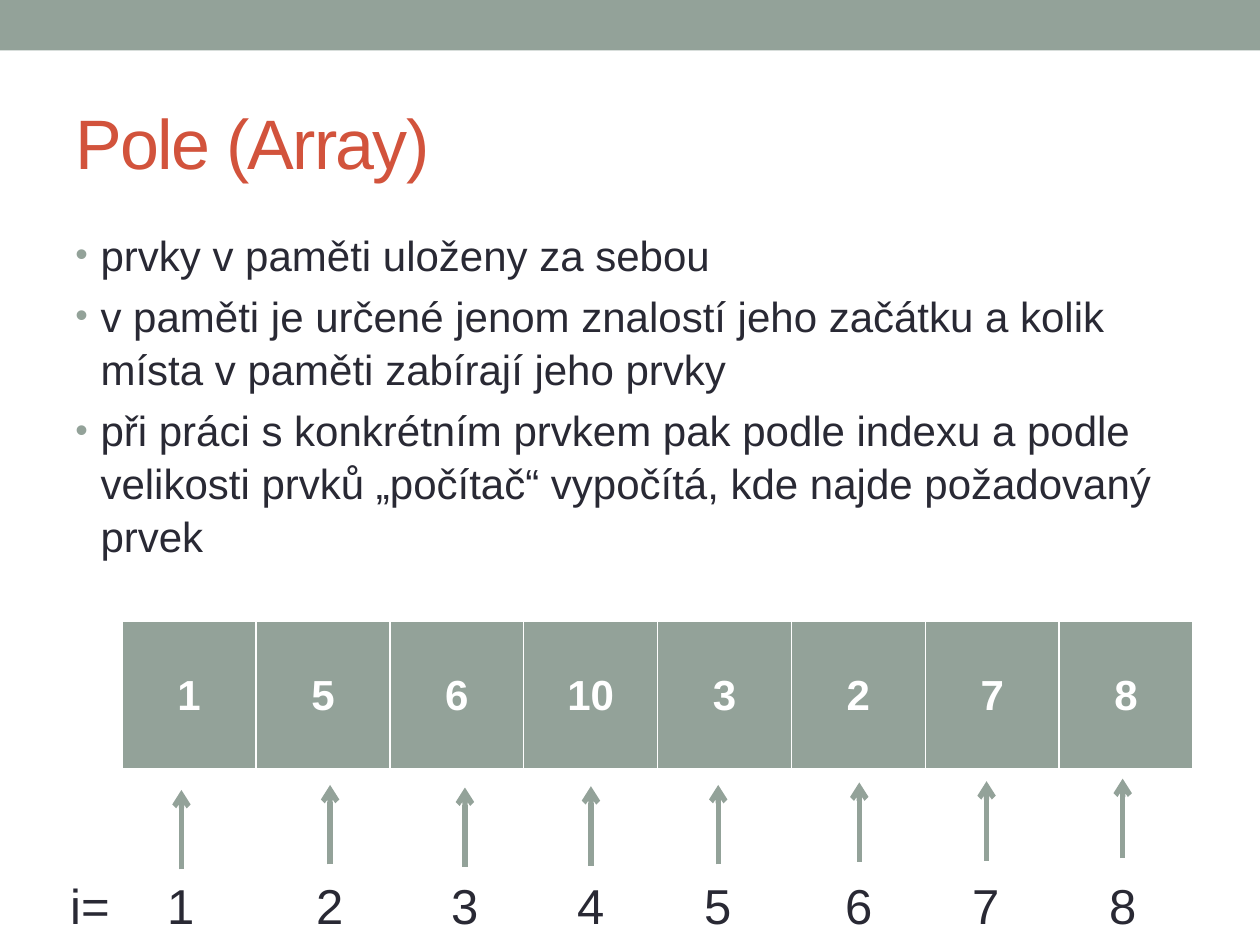
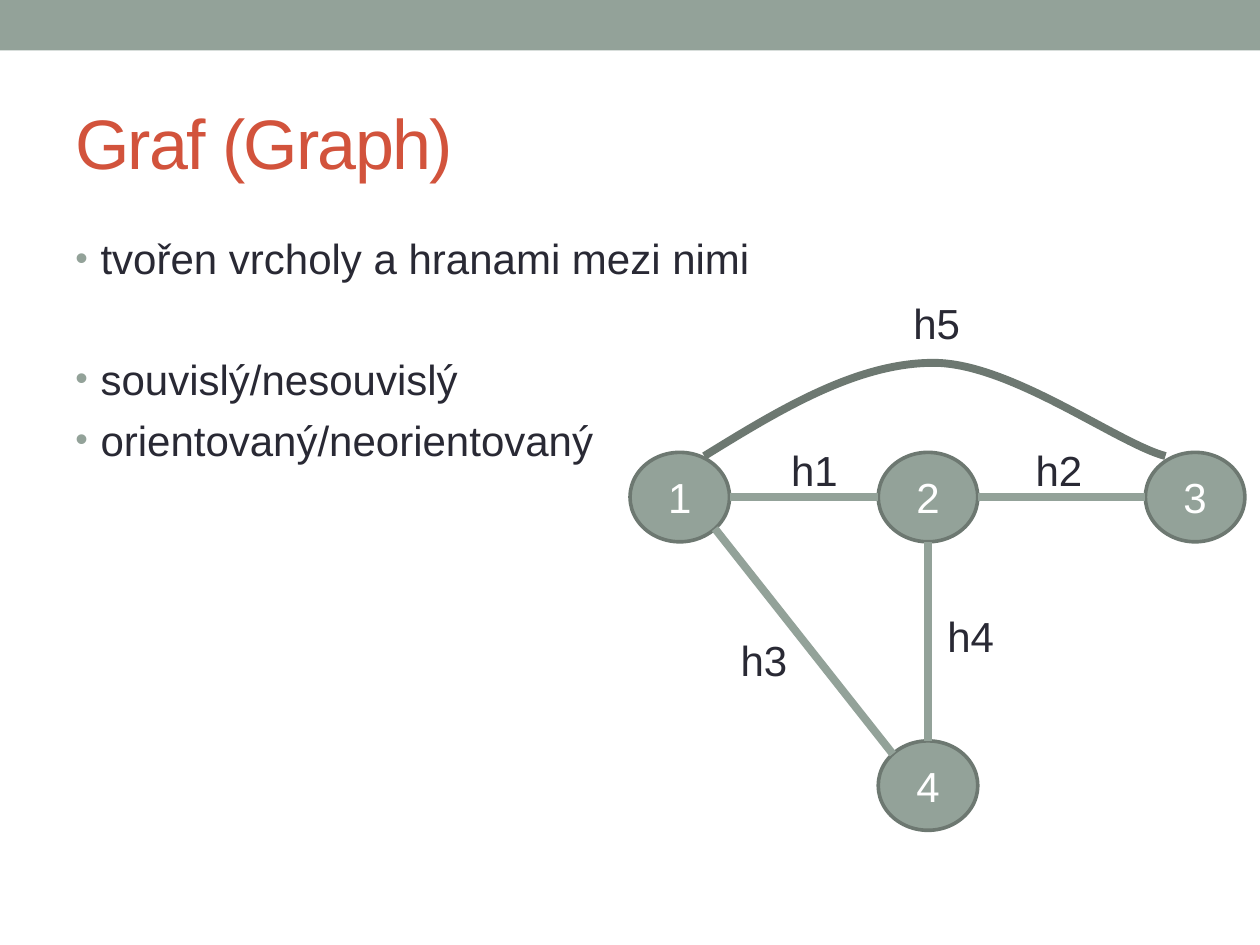
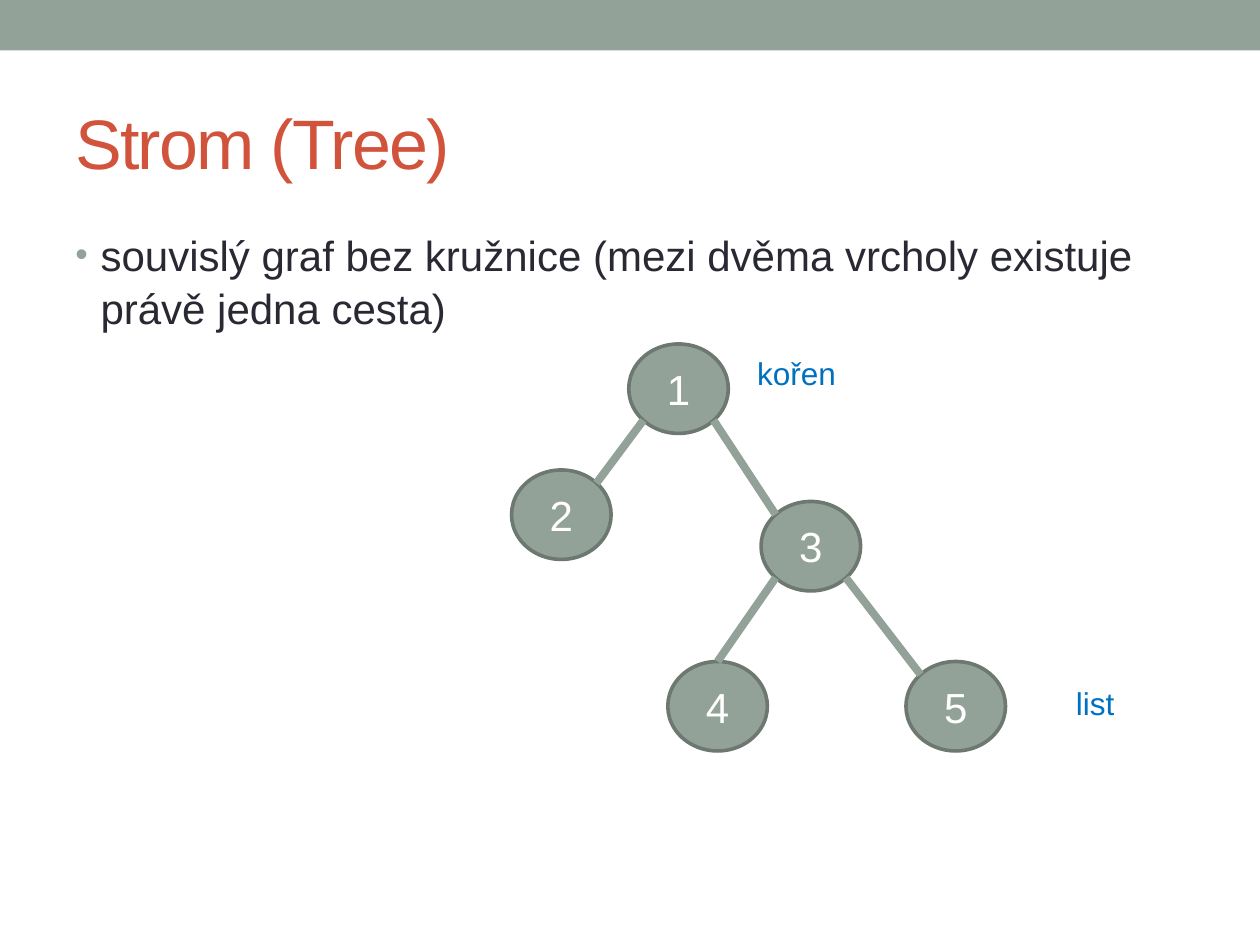
from dataclasses import dataclass
from enum import Enum
from math import sqrt
from typing import NamedTuple

from lxml.etree import SubElement
from pptx import Presentation
from pptx.dml.color import RGBColor
from pptx.enum.shapes import MSO_CONNECTOR, MSO_SHAPE
from pptx.enum.text import MSO_ANCHOR, MSO_AUTO_SIZE, PP_ALIGN
from pptx.oxml.ns import qn
from pptx.util import Emu, Inches, Pt


@dataclass(frozen=True)
class Theme:
    font: str = "Arial"
    sage: str = "93A299"
    outline: str = "6D7871"
    heading: str = "D2533C"
    ink: str = "292934"
    note: str = "0070C0"
    white: str = "FFFFFF"
    title_size: float = 40
    index_size: float = 28
    body_size: float = 24
    note_size: float = 18
    line_spacing: float = 1.05
    paragraph_gap: float = 4.8
    skipped_line: float = 33.7
    arrow_width: float = 3
    edge_width: float = 4.5
    outline_width: float = 2.08


THEME = Theme()
GRID_COLUMNS, GRID_ROWS = 100, 75
SLIDE_WIDTH, SLIDE_HEIGHT = Inches(10), Inches(7.5)
NODE_WIDTH, NODE_HEIGHT = 7.9, 7.1


class Point(NamedTuple):
    column: float
    row: float

    def emu(self) -> tuple[Emu, Emu]:
        return (Emu(round(self.column * SLIDE_WIDTH / GRID_COLUMNS)),
                Emu(round(self.row * SLIDE_HEIGHT / GRID_ROWS)))


class Area(NamedTuple):
    column: float
    row: float
    columns: float
    rows: float

    def emu(self) -> tuple[Emu, Emu, Emu, Emu]:
        return (*Point(self.column, self.row).emu(),
                *Point(self.columns, self.rows).emu())


DIAGONAL = 1 / sqrt(2)


class Side(Enum):
    LEFT = (-1, 0)
    RIGHT = (1, 0)
    TOP = (0, -1)
    BOTTOM = (0, 1)
    TOP_LEFT = (-DIAGONAL, -DIAGONAL)
    TOP_RIGHT = (DIAGONAL, -DIAGONAL)
    BOTTOM_LEFT = (-DIAGONAL, DIAGONAL)
    BOTTOM_RIGHT = (DIAGONAL, DIAGONAL)


@dataclass(frozen=True)
class Node:
    name: str
    column: float
    row: float

    def side(self, side: Side) -> Point:
        across, down = side.value
        return Point(self.column + NODE_WIDTH / 2 * (1 + across),
                     self.row + NODE_HEIGHT / 2 * (1 + down))


class Edge(NamedTuple):
    start: str
    start_side: Side
    end: str
    end_side: Side


@dataclass(frozen=True)
class Label:
    text: str
    area: Area
    size: float = THEME.body_size
    color: str = THEME.ink
    align: PP_ALIGN = PP_ALIGN.LEFT
    wrap: bool = True


class Bullet(NamedTuple):
    text: str
    skipped_lines: int = 0


class Element(NamedTuple):
    value: str
    pointer_column: float
    pointer_row: float


BAND = Area(0, 0, GRID_COLUMNS, 4)
TITLE = Area(5, 5.8, 90, 10.8)
BODY = Area(5, 17.5, 90, 53.3)
GRAPH_BODY = Area(5, 17.8, 90, 53.3)
ARRAY = Area(9.7, 49.3, 85, 11.8)
INDEX_ROW, INDEX_WIDTH, INDEX_HEIGHT, POINTER_LENGTH = 69, 4.7, 5.7, 6.3

ARRAY_ELEMENTS = [
    Element("1", 14.4, 62.7), Element("5", 26.2, 62.3),
    Element("6", 36.9, 62.5), Element("10", 46.9, 62.4),
    Element("3", 57, 62.3), Element("2", 68.2, 62.1),
    Element("7", 78.3, 62), Element("8", 89.1, 61.8),
]
GRAPH_NODES = [Node("1", 50, 35.9), Node("2", 69.7, 35.9),
               Node("3", 90.9, 35.9), Node("4", 69.7, 58.8)]
GRAPH_EDGES = [
    Edge("1", Side.RIGHT, "2", Side.LEFT),
    Edge("2", Side.RIGHT, "3", Side.LEFT),
    Edge("1", Side.BOTTOM_RIGHT, "4", Side.TOP_LEFT),
    Edge("2", Side.BOTTOM, "4", Side.TOP),
]
ARC_START = Point(55.9, 36.2)
ARC_CURVES = [
    (Point(61.9, 32.5), Point(68, 28.8), Point(74.1, 28.8)),
    (Point(80.2, 28.8), Point(88.7, 35.2), Point(92.5, 36.2)),
]
EDGE_NAMES = {"h1": Point(61.8, 34.8), "h2": Point(81.2, 34.8),
              "h3": Point(57.8, 49.9), "h4": Point(74.2, 48),
              "h5": Point(71.5, 23.1)}
TREE_NODES = [Node("1", 49.9, 27.3), Node("3", 60.4, 39.8),
              Node("5", 71.9, 52.5), Node("2", 40.6, 37.3),
              Node("4", 53, 52.5)]
TREE_EDGES = [
    Edge("1", Side.BOTTOM_RIGHT, "3", Side.TOP_LEFT),
    Edge("3", Side.BOTTOM_RIGHT, "5", Side.TOP_LEFT),
    Edge("1", Side.BOTTOM_LEFT, "2", Side.TOP_RIGHT),
    Edge("3", Side.BOTTOM_LEFT, "4", Side.TOP),
]
TREE_NOTES = {"kořen": Point(59.1, 27.6), "list": Point(84.4, 53.8)}


def rgb(color: str) -> RGBColor:
    return RGBColor.from_string(color)


def style(paragraph, size: float, color: str, bold: bool = False,
          align: PP_ALIGN = PP_ALIGN.LEFT) -> None:
    paragraph.alignment = align
    font = paragraph.font
    font.name, font.size, font.bold = THEME.font, Pt(size), bold
    font.color.rgb = rgb(color)


def draw_shape(shapes, preset: MSO_SHAPE, area: Area):
    shape = shapes.add_shape(preset, *area.emu())
    shape.shadow.inherit = False
    shape.fill.solid()
    shape.fill.fore_color.rgb = rgb(THEME.sage)
    return shape


def draw_label(shapes, label: Label) -> None:
    frame = shapes.add_textbox(*label.area.emu()).text_frame
    frame.word_wrap = label.wrap
    frame.auto_size = MSO_AUTO_SIZE.SHAPE_TO_FIT_TEXT
    frame.text = label.text
    style(frame.paragraphs[0], label.size, label.color, align=label.align)


def draw_line(shapes, start: Point, end: Point, width: float,
              arrow: bool = False) -> None:
    connector = shapes.add_connector(MSO_CONNECTOR.STRAIGHT,
                                     *start.emu(), *end.emu())
    connector.line.color.rgb = rgb(THEME.sage)
    connector.line.width = Pt(width)
    if arrow:
        SubElement(connector.line._get_or_add_ln(), qn("a:tailEnd"), type="arrow")
    SubElement(connector._element.spPr, qn("a:effectLst"))


def draw_network(shapes, nodes: list[Node], edges: list[Edge]) -> None:
    for node in nodes:
        circle = draw_shape(shapes, MSO_SHAPE.OVAL,
                            Area(node.column, node.row, NODE_WIDTH, NODE_HEIGHT))
        circle.line.color.rgb = rgb(THEME.outline)
        circle.line.width = Pt(THEME.outline_width)
        frame = circle.text_frame
        frame.vertical_anchor = MSO_ANCHOR.MIDDLE
        frame.text = node.name
        style(frame.paragraphs[0], THEME.body_size, THEME.white,
              align=PP_ALIGN.CENTER)
    by_name = {node.name: node for node in nodes}
    for edge in edges:
        draw_line(shapes, by_name[edge.start].side(edge.start_side),
                  by_name[edge.end].side(edge.end_side), THEME.edge_width)


def draw_arc(shapes) -> None:
    builder = shapes.build_freeform(*ARC_START.emu())
    builder.add_line_segments([curve[-1].emu() for curve in ARC_CURVES], close=False)
    arc = builder.convert_to_shape()
    arc.shadow.inherit = False
    arc.fill.background()
    arc.line.color.rgb = rgb(THEME.outline)
    arc.line.width = Pt(THEME.edge_width)
    segments = list(arc._element.iter(qn("a:lnTo")))
    for segment, curve in zip(segments, ARC_CURVES):
        outline = segment.getparent()
        outline.remove(segment)
        bezier = SubElement(outline, qn("a:cubicBezTo"))
        for point in curve:
            x, y = point.emu()
            SubElement(bezier, qn("a:pt"), x=str(x - arc.left), y=str(y - arc.top))


def add_bullet(paragraph) -> None:
    properties = paragraph._p.get_or_add_pPr()
    properties.set("marL", str(Inches(0.2)))
    properties.set("indent", str(Inches(-0.2)))
    color = SubElement(properties, qn("a:buClr"))
    SubElement(color, qn("a:srgbClr"), val=THEME.sage)
    SubElement(properties, qn("a:buSzPct"), val="85000")
    SubElement(properties, qn("a:buFont"), typeface=THEME.font)
    SubElement(properties, qn("a:buChar"), char="•")


def add_topic(presentation, title: str, bullets: list[Bullet], body: Area = BODY):
    slide = presentation.slides.add_slide(presentation.slide_layouts[6])
    draw_shape(slide.shapes, MSO_SHAPE.RECTANGLE, BAND).line.fill.background()

    heading = slide.shapes.add_textbox(*TITLE.emu()).text_frame
    heading.word_wrap = True
    heading.vertical_anchor = MSO_ANCHOR.MIDDLE
    heading.text = title
    style(heading.paragraphs[0], THEME.title_size, THEME.heading)
    heading.paragraphs[0].runs[0]._r.get_or_add_rPr().set("spc", "-100")

    frame = slide.shapes.add_textbox(*body.emu()).text_frame
    frame.word_wrap = True
    frame.text = "\n".join(bullet.text for bullet in bullets)
    for paragraph, bullet in zip(frame.paragraphs, bullets):
        paragraph.line_spacing = THEME.line_spacing
        paragraph.space_before = Pt(THEME.paragraph_gap
                                    + bullet.skipped_lines * THEME.skipped_line)
        add_bullet(paragraph)
        style(paragraph, THEME.body_size, THEME.ink)
    return slide


def add_borders(cell) -> None:
    properties = cell._tc.get_or_add_tcPr()
    for edge, width in {"lnL": 1, "lnR": 1, "lnT": 1, "lnB": 3}.items():
        border = SubElement(properties, qn(f"a:{edge}"), w=str(Pt(width)))
        fill = SubElement(border, qn("a:solidFill"))
        SubElement(fill, qn("a:srgbClr"), val=THEME.white)


def draw_array(shapes) -> None:
    table = shapes.add_table(1, len(ARRAY_ELEMENTS), *ARRAY.emu()).table
    table.horz_banding = False
    for cell, element in zip(table.iter_cells(), ARRAY_ELEMENTS):
        add_borders(cell)
        cell.fill.solid()
        cell.fill.fore_color.rgb = rgb(THEME.sage)
        cell.vertical_anchor = MSO_ANCHOR.MIDDLE
        cell.text = element.value
        style(cell.text_frame.paragraphs[0], THEME.body_size, THEME.white,
              bold=True, align=PP_ALIGN.CENTER)


def build_array(presentation) -> None:
    shapes = add_topic(presentation, "Pole (Array)", [
        Bullet("prvky v paměti uloženy za sebou"),
        Bullet("v paměti je určené jenom znalostí jeho začátku a kolik "
               "místa v paměti zabírají jeho prvky"),
        Bullet("při práci s konkrétním prvkem pak podle indexu a podle velikosti "
               "prvků „počítač“ vypočítá, kde najde požadovaný prvek"),
    ]).shapes
    draw_array(shapes)
    draw_label(shapes, Label("i=", Area(4.6, INDEX_ROW, 7.1, INDEX_HEIGHT),
                             THEME.index_size))
    for index, (_, column, row) in enumerate(ARRAY_ELEMENTS, start=1):
        draw_line(shapes, Point(column, row + POINTER_LENGTH), Point(column, row),
                  THEME.arrow_width, arrow=True)
        area = Area(column - INDEX_WIDTH / 2, INDEX_ROW, INDEX_WIDTH, INDEX_HEIGHT)
        draw_label(shapes, Label(str(index), area, THEME.index_size,
                                 align=PP_ALIGN.CENTER))


def build_graph(presentation) -> None:
    slide = add_topic(presentation, "Graf (Graph)", [
        Bullet("tvořen vrcholy a hranami mezi nimi"),
        Bullet("souvislý/nesouvislý", skipped_lines=1),
        Bullet("orientovaný/neorientovaný"),
    ], GRAPH_BODY)
    shapes = slide.shapes.add_group_shape().shapes
    draw_network(shapes, GRAPH_NODES, GRAPH_EDGES)
    draw_arc(shapes)
    for name, corner in EDGE_NAMES.items():
        draw_label(shapes, Label(name, Area(*corner, 5.8, 5), wrap=False))


def build_tree(presentation) -> None:
    shapes = add_topic(presentation, "Strom (Tree)", [
        Bullet("souvislý graf bez kružnice (mezi dvěma vrcholy existuje "
               "právě jedna cesta)"),
    ]).shapes
    draw_network(shapes, TREE_NODES, TREE_EDGES)
    for note, corner in TREE_NOTES.items():
        draw_label(shapes, Label(note, Area(*corner, 8.5, 4),
                                 THEME.note_size, THEME.note))


def main() -> None:
    presentation = Presentation()
    presentation.slide_width, presentation.slide_height = SLIDE_WIDTH, SLIDE_HEIGHT
    build_array(presentation)
    build_graph(presentation)
    build_tree(presentation)
    presentation.save("out.pptx")


if __name__ == "__main__":
    main()
